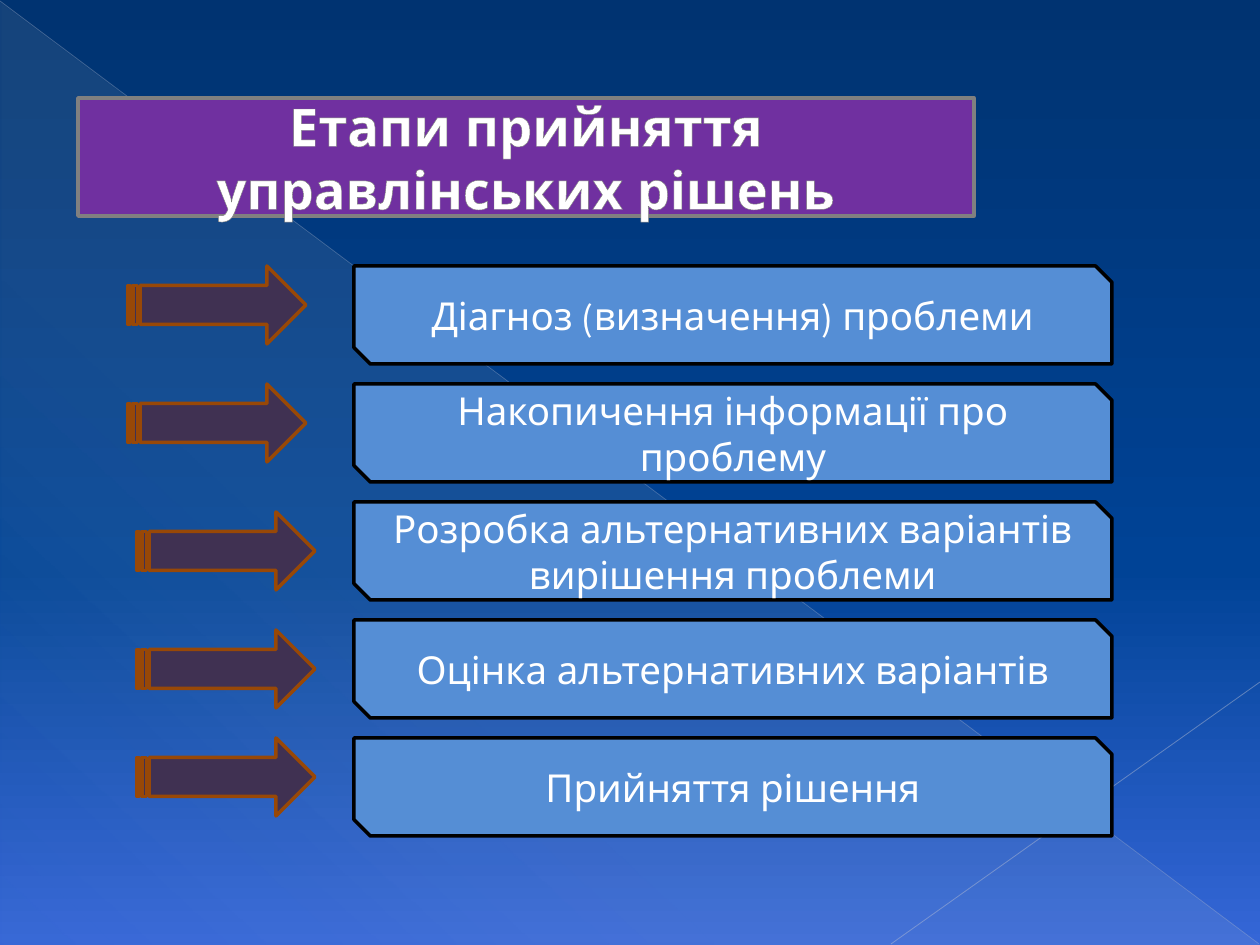
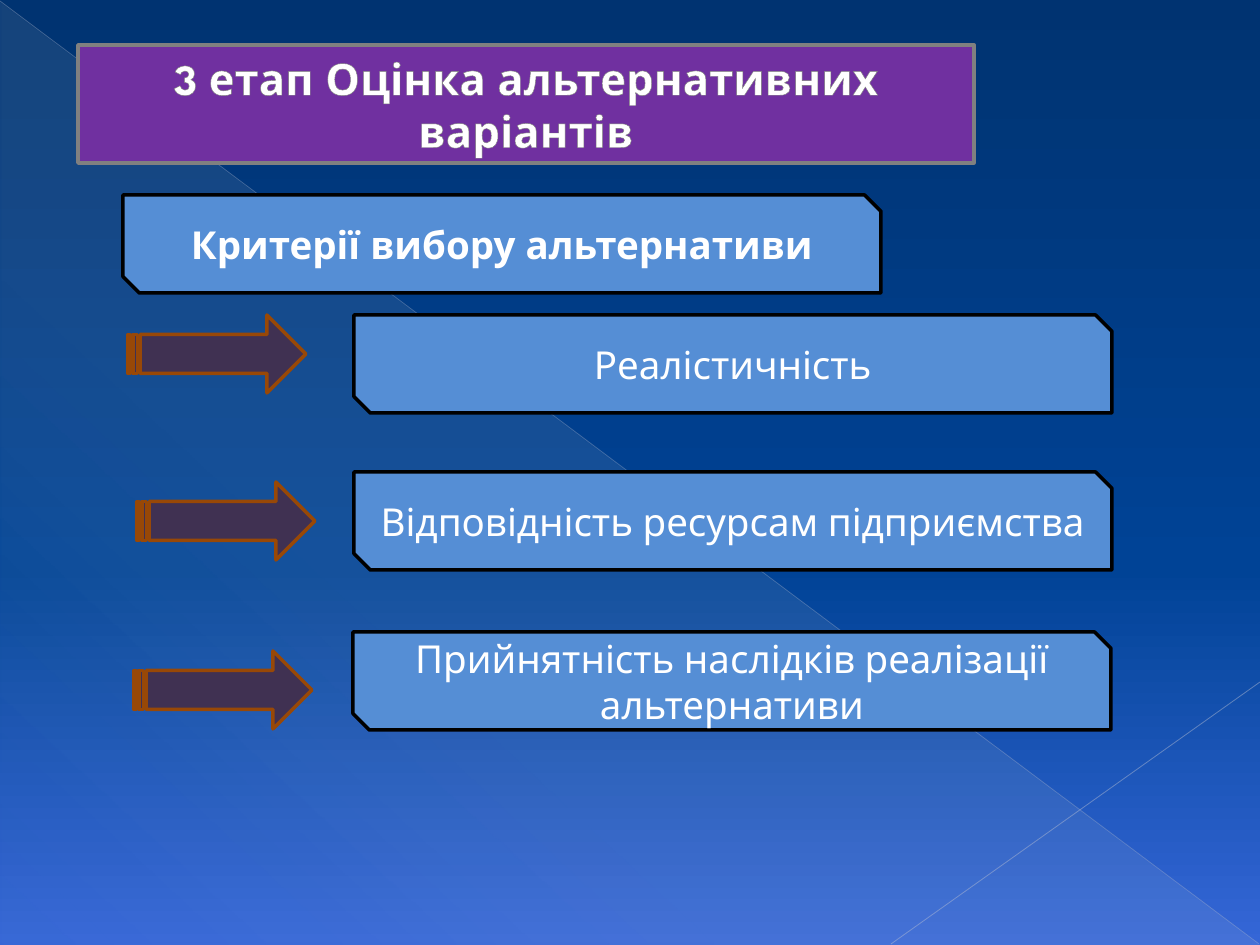
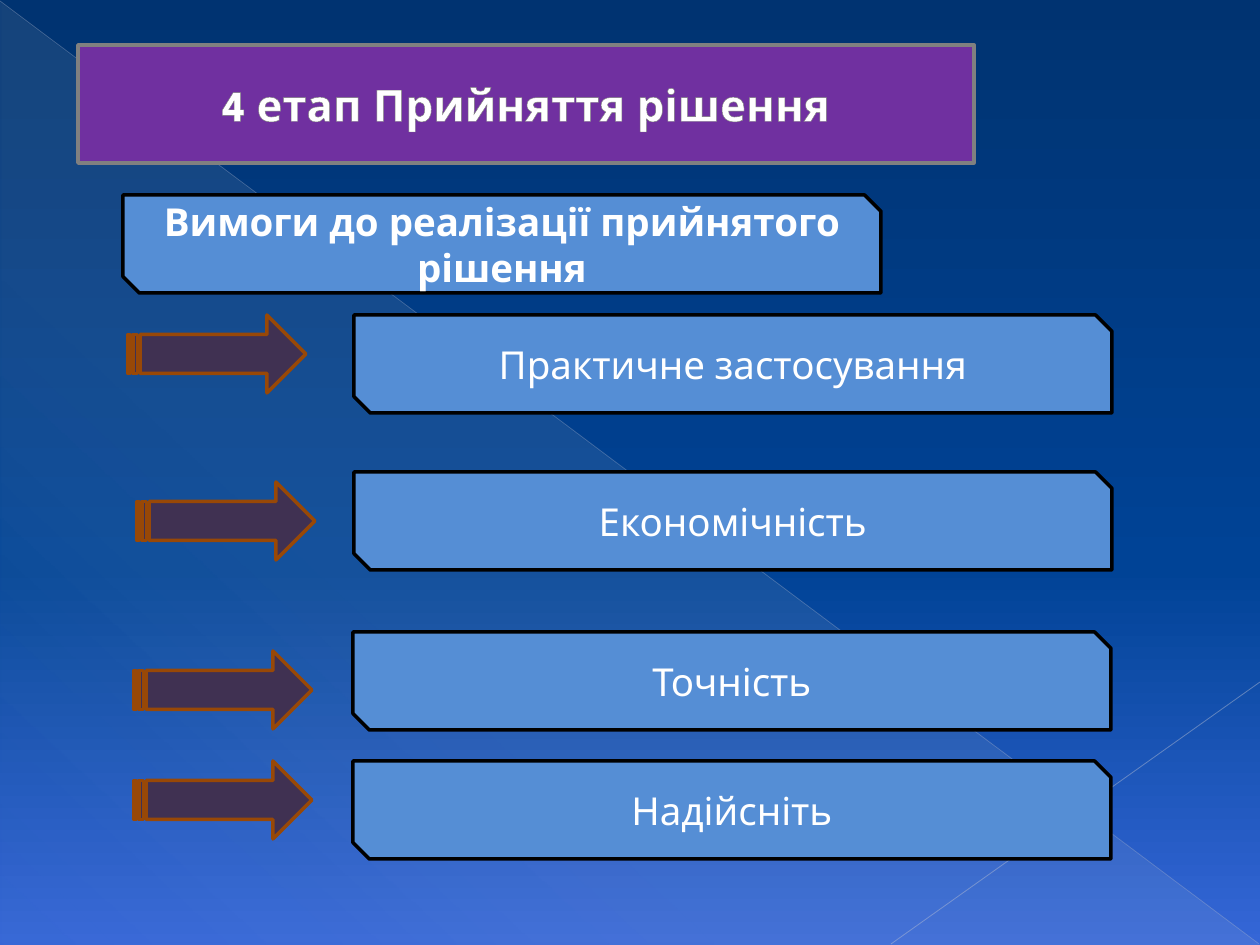
"""Builds three slides on the stages of management decision making."""
from lxml import etree
from pptx import Presentation
from pptx.dml.color import RGBColor
from pptx.enum.shapes import MSO_CONNECTOR, MSO_SHAPE
from pptx.enum.text import MSO_ANCHOR, MSO_AUTO_SIZE, PP_ALIGN
from pptx.oxml.ns import qn
from pptx.util import Emu, Pt

CENTER = PP_ALIGN.CENTER
MIDDLE = MSO_ANCHOR.MIDDLE
NO_AUTOFIT = MSO_AUTO_SIZE.NONE
CARD = MSO_SHAPE.SNIP_2_DIAG_RECTANGLE
ARROW = MSO_SHAPE.STRIPED_RIGHT_ARROW
TRIANGLE = MSO_SHAPE.RIGHT_TRIANGLE
STRAIGHT = MSO_CONNECTOR.STRAIGHT

FONT = "League Spartan"
WHITE = RGBColor(0xFF, 0xFF, 0xFF)
BLACK = RGBColor(0, 0, 0)
PURPLE = RGBColor(0x70, 0x30, 0xA0)
GREY = RGBColor(0x80, 0x80, 0x80)
OUTLINE = RGBColor(0x7D, 0x7D, 0x7D)
CARD_BLUE = RGBColor(0x55, 0x8E, 0xD5)
PLUM = RGBColor(0x40, 0x31, 0x52)
BROWN = RGBColor(0x98, 0x48, 0x07)
NAVY = RGBColor(0x00, 0x33, 0x71)
ROYAL = RGBColor(0x00, 0x43, 0x96)
SKY = RGBColor(0x35, 0x66, 0xD7)
CREAM = RGBColor(0xEE, 0xEC, 0xE1)
LONG_RAY = RGBColor(0xAD, 0xB6, 0xCE)
SHORT_RAY = RGBColor(0xB6, 0xBE, 0xD3)

PX = 914400 / 126
SLIDE_W, SLIDE_H = 1260, 945
TITLE_X, TITLE_W, TITLE_H = 78, 896, 118
CARD_W, CARD_H = 758, 98
ARROW_W, ARROW_H = 178, 78
HEADING_X, HEADING_Y = 123, 195

STAGE_ARROWS = [(128, 266), (128, 384), (137, 512), (137, 630), (137, 738)]
STAGE_CARDS = [(354, 266 + 118 * row) for row in range(5)]
CRITERIA_ARROWS = [(128, 315), (137, 482), (134, 651), (134, 761)]
CRITERIA_CARDS = [(354, 315), (354, 472), (353, 632), (353, 761)]

SLIDES = [
    {
        "title": "Етапи прийняття управлінських рішень",
        "title_y": 98,
        "title_size": 30,
        "heading": None,
        "items": [
            "Діагноз (визначення) проблеми",
            "Накопичення інформації про проблему",
            "Розробка альтернативних варіантів вирішення проблеми",
            "Оцінка альтернативних варіантів",
            "Прийняття рішення",
        ],
        "cards": STAGE_CARDS,
        "arrows": STAGE_ARROWS,
    },
    {
        "title": "3 етап Оцінка альтернативних варіантів",
        "title_y": 45,
        "title_size": 25,
        "heading": "Критерії вибору альтернативи",
        "items": [
            "Реалістичність",
            "Відповідність ресурсам підприємства",
            "Прийнятність наслідків реалізації альтернативи",
        ],
        "cards": CRITERIA_CARDS,
        "arrows": CRITERIA_ARROWS,
    },
    {
        "title": "4 етап Прийняття рішення",
        "title_y": 45,
        "title_size": 25,
        "heading": "Вимоги до реалізації прийнятого рішення",
        "items": ["Практичне застосування", "Економічність", "Точність", "Надійсніть"],
        "cards": CRITERIA_CARDS,
        "arrows": CRITERIA_ARROWS,
    },
]


def px(*lengths):
    return [Emu(round(length * PX)) for length in lengths]


def add_colour(parent, colour, opacity=100):
    srgb = etree.SubElement(parent, qn("a:srgbClr"), val=str(colour))
    if opacity < 100:
        etree.SubElement(srgb, qn("a:alpha"), val=str(opacity * 1000))


def set_gradient(fill, owner, stops, angle):
    fill.gradient()
    gradient = owner.xpath(".//a:gradFill")[0]
    for child in list(gradient):
        gradient.remove(child)
    stop_list = etree.SubElement(gradient, qn("a:gsLst"))
    for position, colour, opacity in stops:
        stop = etree.SubElement(stop_list, qn("a:gs"), pos=str(position * 1000))
        add_colour(stop, colour, opacity)
    etree.SubElement(gradient, qn("a:lin"), ang=str(angle * 60000), scaled="0")


def paint(shape, fill, line):
    shape.fill.solid()
    shape.fill.fore_color.rgb = fill
    shape.line.color.rgb = line
    shape.line.width = Pt(2)


def write(shape, text, size, bold):
    frame = shape.text_frame
    frame.text = text
    frame.word_wrap = True
    frame.auto_size = NO_AUTOFIT
    frame.vertical_anchor = MIDDLE
    paragraph = frame.paragraphs[0]
    paragraph.alignment = CENTER
    font = paragraph.runs[0].font
    font.name, font.size, font.bold = FONT, Pt(size), bold
    font.color.rgb = WHITE


def add_block(slide, kind, place, size, fill, line):
    block = slide.shapes.add_shape(kind, *px(*place, *size))
    block.shadow.inherit = False
    paint(block, fill, line)
    return block


def add_card(slide, place, text, bold=False):
    card = add_block(slide, CARD, place, (CARD_W, CARD_H), CARD_BLUE, BLACK)
    write(card, text, 22, bold)


def add_ray(slide, ends, colour, width, opacity):
    ray = slide.shapes.add_connector(STRAIGHT, *px(*ends))
    ray.line.color.rgb = colour
    ray.line.width = Pt(width)
    srgb = ray.element.xpath(".//a:ln//a:srgbClr")[0]
    etree.SubElement(srgb, qn("a:alpha"), val=str(opacity * 1000))
    etree.SubElement(ray.element.spPr, qn("a:effectLst"))
    return ray


def decorate_master(master, slide):
    set_gradient(master.background.fill, master.element,
                 [(0, NAVY, 100), (60, ROYAL, 100), (100, SKY, 100)], 90)
    wedge = slide.shapes.add_shape(TRIANGLE, *px(1, 2, SLIDE_W - 1, SLIDE_H - 2))
    wedge.shadow.inherit = False
    wedge.line.fill.background()
    set_gradient(wedge.fill, wedge.element,
                 [(0, CREAM, 10), (70, CREAM, 8), (100, CREAM, 1)], 133)
    long_ray = add_ray(slide, (0, 1, 1259, 944), LONG_RAY, 0.39, 35)
    short_ray = add_ray(slide, (1260, 682, 891, 944), SHORT_RAY, 0.47, 45)
    for number, part in enumerate((wedge, long_ray, short_ray), start=20):
        part.element.xpath(".//p:cNvPr")[0].set("id", str(number))
        master.shapes.element.append(part.element)


def set_title(slide, content):
    title = slide.shapes.title
    title.left, title.top, title.width, title.height = px(
        TITLE_X, content["title_y"], TITLE_W, TITLE_H)
    paint(title, PURPLE, GREY)
    write(title, content["title"], content["title_size"], True)
    properties = title.element.xpath(".//a:rPr")[0]
    edge = etree.Element(qn("a:ln"), w=str(Pt(0.83)))
    add_colour(etree.SubElement(edge, qn("a:solidFill")), OUTLINE)
    properties.insert(0, edge)


def main():
    deck = Presentation()
    deck.slide_width, deck.slide_height = px(SLIDE_W, SLIDE_H)
    title_only = deck.slide_layouts[5]
    for index, content in enumerate(SLIDES):
        slide = deck.slides.add_slide(title_only)
        if index == 0:
            decorate_master(deck.slide_master, slide)
        set_title(slide, content)
        if content["heading"]:
            add_card(slide, (HEADING_X, HEADING_Y), content["heading"], True)
        for item, card, arrow in zip(content["items"], content["cards"], content["arrows"]):
            add_card(slide, card, item)
            add_block(slide, ARROW, arrow, (ARROW_W, ARROW_H), PLUM, BROWN)
    deck.save("out.pptx")


if __name__ == "__main__":
    main()
